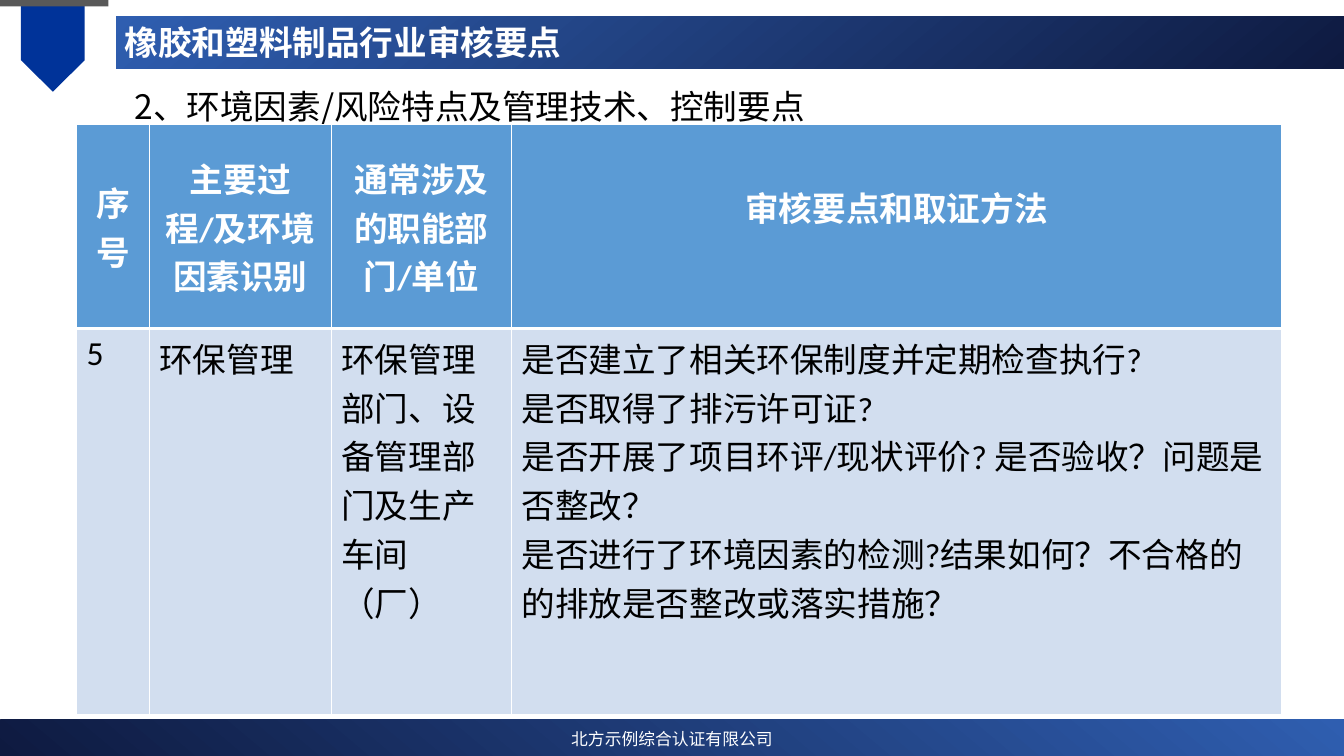
from dataclasses import dataclass

from lxml import etree
from pptx import Presentation
from pptx import util as u
from pptx.dml.color import RGBColor
from pptx.enum import lang, shapes, text
from pptx.oxml import ns


@dataclass(frozen=True)
class Theme:
    navy: str = "0E1A40"
    blue: str = "2F5EB0"
    ribbon: str = "003399"
    gray: str = "595959"
    white: str = "FFFFFF"
    black: str = "000000"
    header: str = "5B9BD5"
    body: str = "D2DEEF"
    heading_font: str = "Noto Sans CJK SC"
    table_font: str = "Calibri"
    large: int = 24
    small: int = 12
    thin: int = 1
    thick: int = 3


class SlideBuilder:
    def __init__(self, presentation, theme):
        self.theme = theme
        self.slide = presentation.slides.add_slide(presentation.slide_layouts[6])

    def block(self, kind, box, color=None, angle=None, rotation=0):
        """Draw a borderless shape; an angle instead of a colour gives the navy-blue gradient."""
        shape = self.slide.shapes.add_shape(kind, *map(u.Pt, box))
        shape.shadow.inherit = False
        shape.line.fill.background()
        shape.rotation = rotation
        if angle is None:
            shape.fill.solid()
            shape.fill.fore_color.rgb = RGBColor.from_string(color)
        else:
            shape.fill.gradient()
            shape.fill.gradient_angle = angle
            for stop, shade in zip(shape.fill.gradient_stops, (self.theme.navy, self.theme.blue)):
                stop.color.rgb = RGBColor.from_string(shade)
        return shape

    def run(self, paragraph, words, color, size=None, font=None, bold=False):
        run = paragraph.add_run()
        run.text = words
        run.font.size = u.Pt(size or self.theme.large)
        run.font.name = font or self.theme.heading_font
        run.font.bold = bold
        run.font.color.rgb = RGBColor.from_string(color)
        run.font.language_id = lang.MSO_LANGUAGE_ID.SIMPLIFIED_CHINESE
        latin = run.font._element.find(ns.qn("a:latin"))
        east_asian = etree.Element(ns.qn("a:ea"), typeface=self.theme.heading_font)
        latin.addnext(east_asian)

    def text_box(self, box, words, color, anchor, line_spacing, gap=0, bold=False):
        frame = self.slide.shapes.add_textbox(*map(u.Pt, box)).text_frame
        frame.word_wrap = True
        frame.vertical_anchor = anchor
        paragraph = frame.paragraphs[0]
        paragraph.line_spacing = line_spacing
        paragraph.space_before = paragraph.space_after = u.Pt(gap)
        self.run(paragraph, words, color, bold=bold)

    def caption(self, shape, words):
        shape.text_frame.vertical_anchor = text.MSO_ANCHOR.MIDDLE
        paragraph = shape.text_frame.paragraphs[0]
        paragraph.alignment = text.PP_ALIGN.CENTER
        self.run(paragraph, words, self.theme.white, self.theme.small)

    def cell_borders(self, cell, is_header):
        theme = self.theme
        top, bottom = (theme.thin, theme.thick) if is_header else (theme.thick, theme.thin)
        widths = {"lnL": theme.thin, "lnR": theme.thin, "lnT": top, "lnB": bottom}
        properties = cell._tc.get_or_add_tcPr()
        for index, (tag, width) in enumerate(widths.items()):
            line = etree.Element(ns.qn(f"a:{tag}"), w=str(u.Pt(width)))
            fill = etree.SubElement(line, ns.qn("a:solidFill"))
            etree.SubElement(fill, ns.qn("a:srgbClr"), val=theme.white)
            properties.insert(index, line)

    def fill_cell(self, cell, lines, is_header):
        theme = self.theme
        cell.fill.solid()
        cell.fill.fore_color.rgb = RGBColor.from_string(theme.header if is_header else theme.body)
        cell.vertical_anchor = text.MSO_ANCHOR.MIDDLE if is_header else text.MSO_ANCHOR.TOP
        frame = cell.text_frame
        for index, words in enumerate(lines):
            paragraph = frame.add_paragraph() if index else frame.paragraphs[0]
            paragraph.alignment = text.PP_ALIGN.CENTER if is_header else text.PP_ALIGN.LEFT
            self.run(paragraph, words, theme.white if is_header else theme.black,
                     font=theme.table_font, bold=is_header)
        self.cell_borders(cell, is_header)

    def table(self, left, top, widths, heights, rows):
        """Add a table with a header row; each cell is a list of paragraphs."""
        frame = self.slide.shapes.add_table(len(rows), len(widths), u.Pt(left), u.Pt(top),
                                            u.Pt(sum(widths)), u.Pt(sum(heights)))
        table = frame.table
        table.horz_banding = False
        for column, width in zip(table.columns, widths):
            column.width = u.Pt(width)
        for row_index, (height, row) in enumerate(zip(heights, rows)):
            table.rows[row_index].height = u.Pt(height)
            for column_index, lines in enumerate(row):
                self.fill_cell(table.cell(row_index, column_index), lines, row_index == 0)
        return table


AUDIT_ROWS = [
    [["序号"], ["主要过程/及环境因素识别"], ["通常涉及的职能部门/单位"], ["审核要点和取证方法"]],
    [["5"], ["环保管理"], ["环保管理部门、设备管理部门及生产车间（厂）"], [
        "是否建立了相关环保制度并定期检查执行?",
        "是否取得了排污许可证?",
        "是否开展了项目环评/现状评价? 是否验收？问题是否整改？",
        "是否进行了环境因素的检测?结果如何？不合格的的排放是否整改或落实措施？",
    ]],
]


def main():
    presentation = Presentation()
    presentation.slide_width, presentation.slide_height = u.Pt(960), u.Pt(540)
    theme = Theme()
    builder = SlideBuilder(presentation, theme)
    kinds = shapes.MSO_SHAPE

    footer = builder.block(kinds.RECTANGLE, (0, 514, 960, 28), angle=50)
    builder.caption(footer, "北方示例综合认证有限公司")
    builder.block(kinds.RECTANGLE, (15, 0, 45.5, 43), theme.ribbon)
    builder.block(kinds.ISOSCELES_TRIANGLE, (15, 43, 45.5, 22.5), theme.ribbon, rotation=180)
    builder.block(kinds.RECTANGLE, (0, 0, 77.5, 4.5), theme.gray)
    builder.block(kinds.RECTANGLE, (83, 11.5, 877, 37.5), angle=130)

    builder.text_box((82, 11.5, 828, 40), "橡胶和塑料制品行业审核要点", theme.white,
                     text.MSO_ANCHOR.MIDDLE, 0.9, bold=True)
    builder.text_box((89, 49, 818, 424), "2、环境因素/风险特点及管理技术、控制要点", theme.black,
                     text.MSO_ANCHOR.TOP, 1.3, gap=6)
    table = builder.table(54.6, 89, (52, 130, 128.8, 550), (145.6, 276), AUDIT_ROWS)
    table.cell(0, 3).margin_bottom = u.Pt(32)

    presentation.save("out.pptx")


if __name__ == "__main__":
    main()
